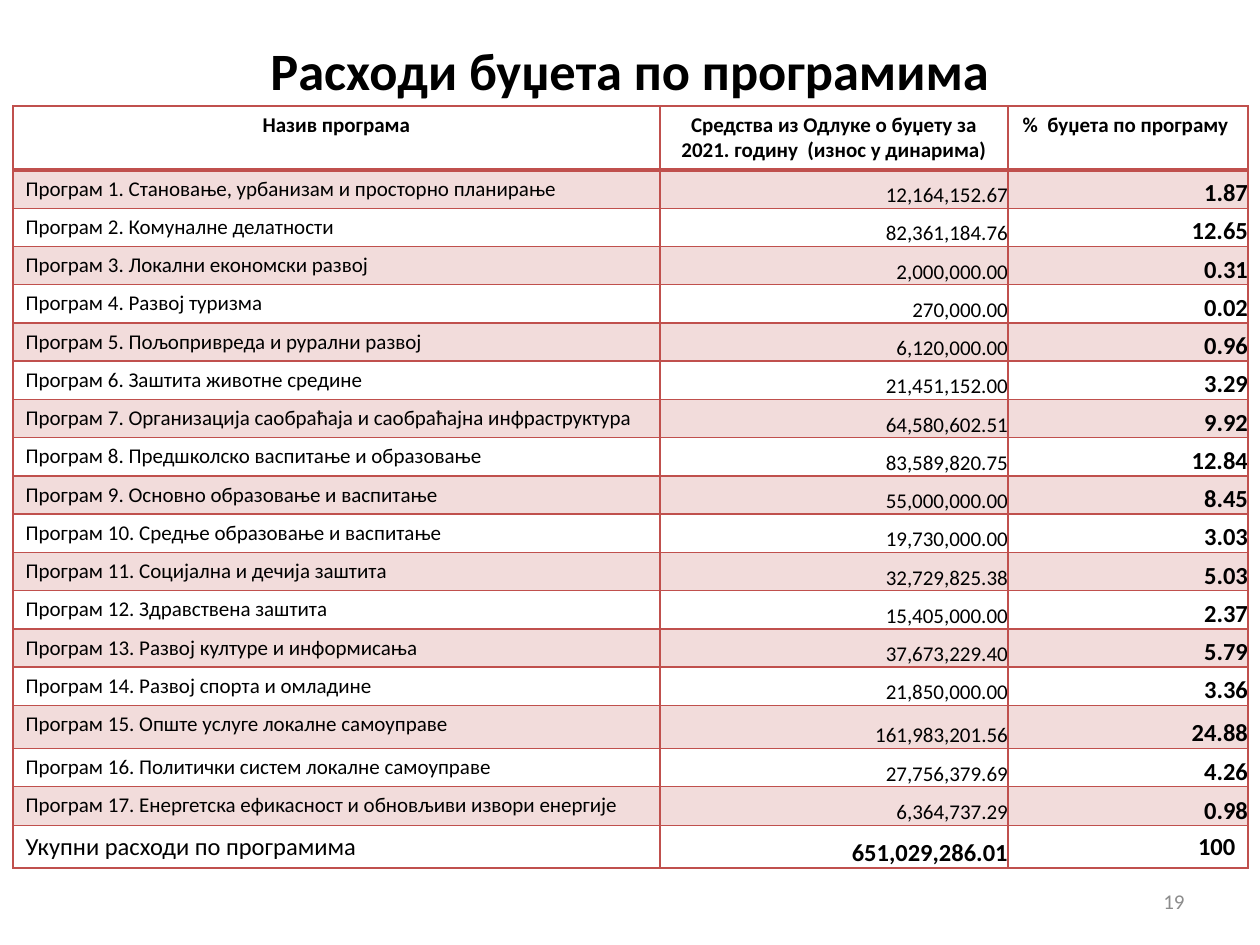
import pptx
import pptx.util
import pptx.oxml
import pptx.oxml.ns
import pptx.dml.color
import pptx.enum.text

PX = 914400 // 126
FONT, BLACK, GREY, RED = "Calibri", "000000", "8C8C8C", "C0504D"
TINT = 20
ALIGN = pptx.enum.text.PP_ALIGN
ANCHOR = pptx.enum.text.MSO_ANCHOR

TITLE = "Расходи буџета по програмима"
NUMBER = "19"
HEADER = (
    "Назив програма",
    "Средства из Одлуке о буџету за 2021. годину  (износ у динарима)",
    "%  буџета по програму ",
)
PROGRAMS = [
    ("Програм 1. Становање, урбанизам и просторно планирање", "12,164,152.67", "1.87"),
    ("Програм 2. Комуналне делатности", "82,361,184.76", "12.65"),
    ("Програм 3. Локални економски развој", "2,000,000.00", "0.31"),
    ("Програм 4. Развој туризма", "270,000.00", "0.02"),
    ("Програм 5. Пољопривреда и рурални развој", "6,120,000.00", "0.96"),
    ("Програм 6. Заштита животне средине", "21,451,152.00", "3.29"),
    ("Програм 7. Организација саобраћаја и саобраћајна инфраструктура", "64,580,602.51", "9.92"),
    ("Програм 8. Предшколско васпитање и образовање", "83,589,820.75", "12.84"),
    ("Програм 9. Основно образовање и васпитање", "55,000,000.00", "8.45"),
    ("Програм 10. Средње образовање и васпитање", "19,730,000.00", "3.03"),
    ("Програм 11. Социјална и дечија заштита", "32,729,825.38", "5.03"),
    ("Програм 12. Здравствена заштита", "15,405,000.00", "2.37"),
    ("Програм 13. Развој културе и информисања", "37,673,229.40", "5.79"),
    ("Програм 14. Развој спорта и омладине", "21,850,000.00", "3.36"),
    ("Програм 15. Опште услуге локалне самоуправе", "161,983,201.56", "24.88"),
    ("Програм 16. Политички систем локалне самоуправе", "27,756,379.69", "4.26"),
    ("Програм 17. Енергетска ефикасност и обновљиви извори енергије", "6,364,737.29", "0.98"),
]
TOTAL = ("Укупни расходи по програмима", "651,029,286.01", "100")

COLUMNS = [647, 348, 240]
ROWS = [64] + [38] * 14 + [43, 38, 39, 42]


def px(*values):
    return [pptx.util.Emu(v * PX) for v in values]


def rgb(color):
    return pptx.dml.color.RGBColor.from_string(color)


def write(tf, text, size, align, bold=False, color=BLACK):
    p = tf.paragraphs[0]
    p.alignment = align
    r = p.add_run()
    r.text = text
    r.font.name = FONT
    r.font.size = pptx.util.Pt(size)
    r.font.bold = bold
    r.font.color.rgb = rgb(color)


def tint(cell):
    cell.fill.solid()
    cell.fill.fore_color.rgb = rgb(RED)
    color = cell.fill._xPr.find(".//" + pptx.oxml.ns.qn("a:srgbClr"))
    alpha = pptx.oxml.parse_xml(f'<a:alpha {pptx.oxml.ns.nsdecls("a")} val="{TINT * 1000}"/>')
    color.append(alpha)


def border(cell, widths):
    tcPr = cell._tc.get_or_add_tcPr()
    for i, (side, width) in enumerate(widths.items()):
        tcPr.insert(i, pptx.oxml.parse_xml(
            f'<a:ln{side} {pptx.oxml.ns.nsdecls("a")} w="{pptx.util.Pt(width)}">'
            f'<a:solidFill><a:srgbClr val="{RED}"/></a:solidFill></a:ln{side}>'))


def cell_style(row, col):
    if row == 0:
        return 12, ALIGN.CENTER, True
    last = row == len(ROWS) - 1
    size = 14 if last or col == 2 else 12
    align = ALIGN.RIGHT if col else ALIGN.LEFT
    return size, align, col == 2 or (last and col == 1)


def add_budget_table(s):
    data = [HEADER, *PROGRAMS, TOTAL]
    last = len(data) - 1
    box = px(13, 106, sum(COLUMNS), sum(ROWS))
    table = s.shapes.add_table(len(data), len(COLUMNS), *box).table
    table.first_row = table.horz_banding = False
    for column, width in zip(table.columns, px(*COLUMNS)):
        column.width = width
    for row, height in zip(table.rows, px(*ROWS)):
        row.height = height
    for i, values in enumerate(data):
        for j, text in enumerate(values):
            cell = table.cell(i, j)
            size, align, bold = cell_style(i, j)
            write(cell.text_frame, text, size, align, bold)
            if i and j and (i, j) != (last, 2):
                cell.vertical_anchor = ANCHOR.BOTTOM
                cell.margin_left = cell.margin_right = 0
                cell.margin_top = cell.margin_bottom = 0
            if i % 2:
                tint(cell)
            else:
                cell.fill.background()
            border(cell, {"L": 1, "R": 1, "T": 2 if i == 1 else 1, "B": 2 if i == 0 else 1})


def main():
    prs = pptx.Presentation()
    prs.slide_width, prs.slide_height = px(1260, 945)
    s = prs.slides.add_slide(prs.slide_layouts[5])

    title = s.shapes.title
    title.left, title.top, title.width, title.height = px(93, 16, 1074, 107)
    title.text_frame.vertical_anchor = ANCHOR.MIDDLE
    write(title.text_frame, TITLE, 30, ALIGN.CENTER, True)

    add_budget_table(s)

    number = s.shapes.add_textbox(*px(903, 876, 294, 50)).text_frame
    number.word_wrap = True
    number.vertical_anchor = ANCHOR.MIDDLE
    write(number, NUMBER, 12, ALIGN.RIGHT, color=GREY)

    prs.save("out.pptx")


if __name__ == "__main__":
    main()
